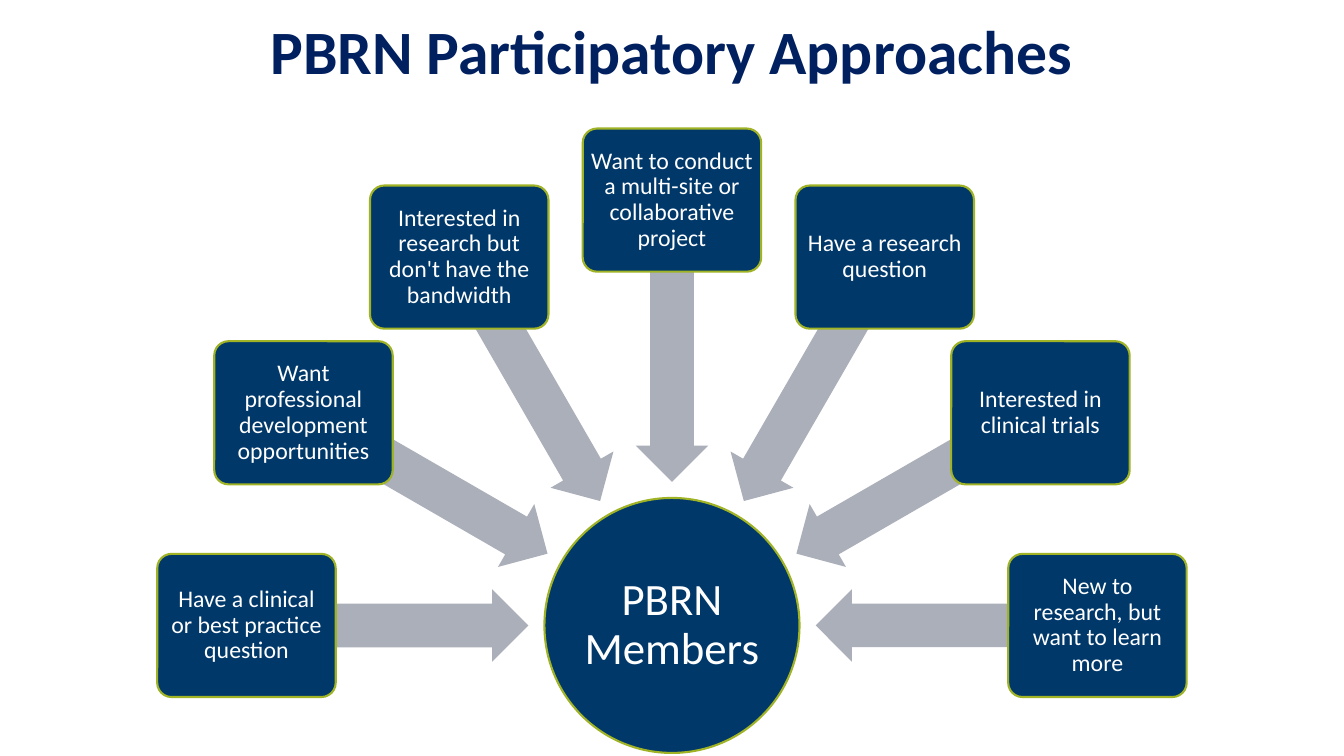
from math import cos, radians, sin

from pptx import Presentation
from pptx.dml.color import RGBColor
from pptx.enum.shapes import MSO_SHAPE as Shape
from pptx.enum.text import MSO_ANCHOR as Anchor, MSO_AUTO_SIZE as AutoSize, PP_ALIGN as Align
from pptx.util import Inches, Pt

TITLE = "PBRN Participatory Approaches"
HUB = "PBRN Members"
REASONS = [  # clockwise, from the left
    "Have a clinical or best practice question",
    "Want professional development opportunities",
    "Interested in research but don't have the bandwidth",
    "Want to conduct a multi-site or collaborative project",
    "Have a research question",
    "Interested in clinical trials",
    "New to research, but want to learn more",
]

NAVY = RGBColor(0x00, 0x38, 0x6A)
TITLE_BLUE = RGBColor(0x00, 0x20, 0x60)
GREEN = RGBColor(0xA0, 0xB3, 0x25)
GRAY = RGBColor(0xAB, 0xAF, 0xB9)
WHITE = RGBColor(0xFF, 0xFF, 0xFF)

CENTER_X, CENTER_Y = 6.665, 6.205
HUB_SIZE = 2.53
BOX_WIDTH, BOX_HEIGHT = 1.77, 1.42
ARROW_WIDTH, ARROW_HEIGHT = 2.79, 0.72
BOX_RADIUS, ARROW_RADIUS = 4.22, 2.82


def write(shape, text, size, color=WHITE, bold=False, inset=None, spacing=None, anchor=Anchor.MIDDLE):
    frame = shape.text_frame
    frame.word_wrap = True
    frame.auto_size = AutoSize.NONE
    frame.vertical_anchor = anchor
    if inset is not None:
        frame.margin_left = frame.margin_right = Inches(inset)
        frame.margin_top = frame.margin_bottom = Inches(inset)
    frame.text = text
    paragraph = frame.paragraphs[0]
    paragraph.alignment = Align.CENTER
    paragraph.line_spacing = spacing
    font = paragraph.runs[0].font
    font.name, font.size, font.bold = "Calibri", Pt(size), bold
    font.color.rgb = color


def add_centered(slide, kind, x, y, width, height, fill, outline=None):
    """Add a preset shape whose middle is at x, y."""
    shape = slide.shapes.add_shape(
        kind, Inches(x - width / 2), Inches(y - height / 2), Inches(width), Inches(height)
    )
    shape.shadow.inherit = False
    shape.fill.solid()
    shape.fill.fore_color.rgb = fill
    if outline is None:
        shape.line.fill.background()
    else:
        shape.line.color.rgb = outline
        shape.line.width = Pt(1.5)
    return shape


def around_hub(radius, angle):
    return CENTER_X + radius * cos(radians(angle)), CENTER_Y + radius * sin(radians(angle))


def main():
    presentation = Presentation()
    presentation.slide_width, presentation.slide_height = Inches(13.33), Inches(7.5)
    slide = presentation.slides.add_slide(presentation.slide_layouts[5])

    title = slide.shapes.title
    title.left, title.top = Inches(2.48), Inches(0.08)
    title.width, title.height = Inches(8.37), Inches(0.84)
    write(title, TITLE, 44, color=TITLE_BLUE, bold=True, anchor=Anchor.TOP)

    hub = add_centered(slide, Shape.OVAL, CENTER_X, CENTER_Y, HUB_SIZE, HUB_SIZE, NAVY, GREEN)
    write(hub, HUB, 32, inset=0.02, spacing=0.9)

    step = 180 / (len(REASONS) - 1)
    for index, reason in enumerate(REASONS):
        angle = 180 + index * step
        arrow = add_centered(
            slide, Shape.LEFT_ARROW, *around_hub(ARROW_RADIUS, angle), ARROW_WIDTH, ARROW_HEIGHT, GRAY
        )
        arrow.adjustments[0], arrow.adjustments[1] = 0.6, 0.5
        arrow.rotation = angle % 360
        box = add_centered(
            slide, Shape.ROUNDED_RECTANGLE, *around_hub(BOX_RADIUS, angle),
            BOX_WIDTH, BOX_HEIGHT, NAVY, GREEN
        )
        box.adjustments[0] = 0.1
        write(box, reason, 17, inset=0.04, spacing=0.9)

    presentation.save("out.pptx")


if __name__ == "__main__":
    main()
